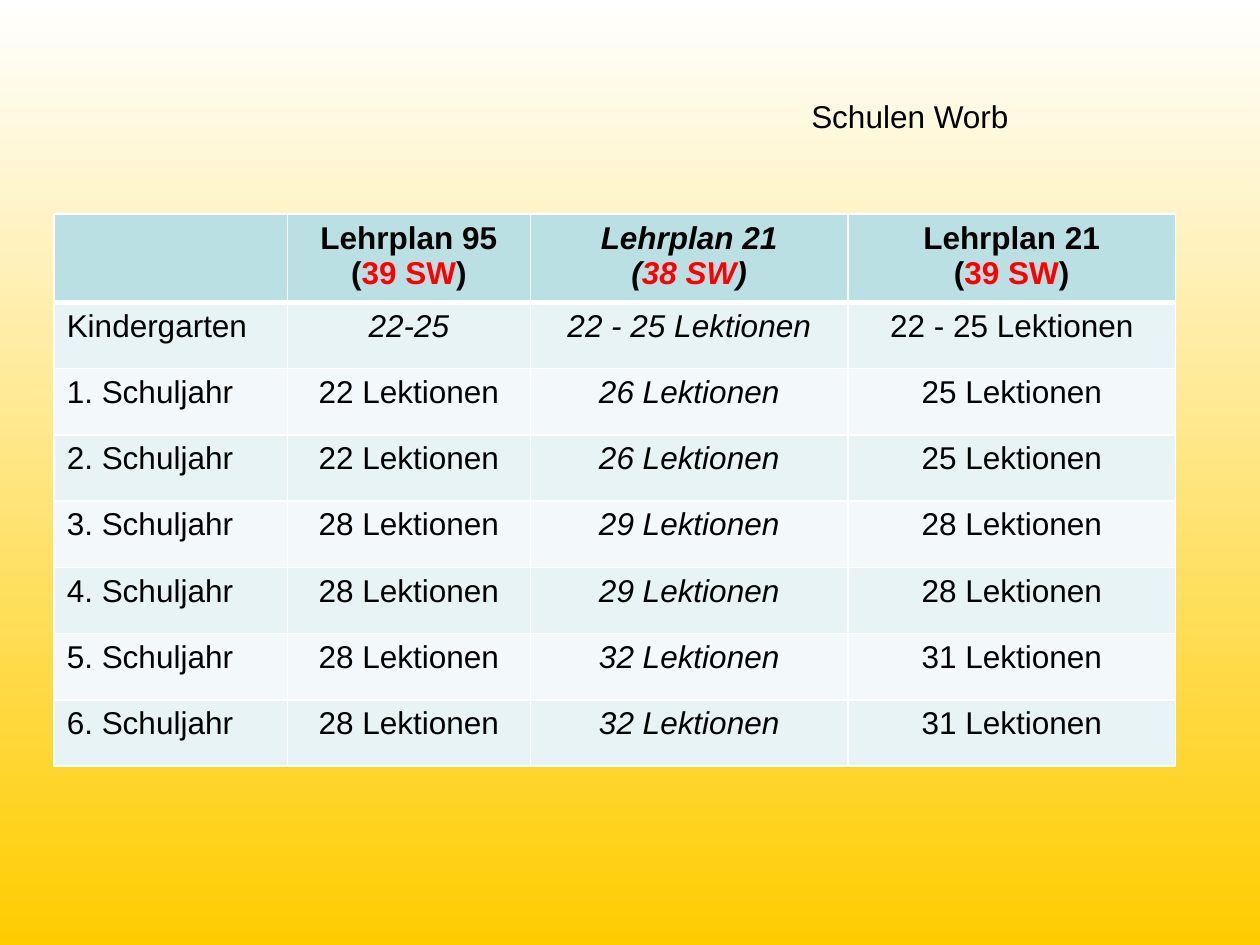
from dataclasses import dataclass

from lxml import etree
from pptx import Presentation
from pptx.dml.color import RGBColor
from pptx.enum import text
from pptx.oxml import ns
from pptx.util import Inches, Pt


@dataclass(frozen=True)
class Theme:
    font: str = "Arial"
    size: int = 18
    ink: str = "000000"
    accent: str = "FF0000"
    white: str = "FFFFFF"
    gold: str = "FFCC00"
    header: str = "BBE0E3"
    bands: tuple = ("E7F3F4", "F3F9FA")
    border: int = 1
    header_border: int = 3


THEME = Theme()
COLUMN_WIDTHS = (1.85, 1.93, 2.52, 2.6)
HEADER_HEIGHT = 0.69
TABLE_HEIGHT = 4.37
HEADINGS = (("Lehrplan 95", "39 SW"), ("Lehrplan 21", "38 SW"), ("Lehrplan 21", "39 SW"))
KINDERGARTEN = ("Kindergarten", "22-25", "22 - 25 Lektionen", "22 - 25 Lektionen")
LESSONS = ((22, 26, 25), (22, 26, 25), (28, 29, 28), (28, 29, 28), (28, 32, 31), (28, 32, 31))
ITALIC_COLUMN = 2


def add_run(paragraph, words, color=THEME.ink, bold=False, italic=False):
    run = paragraph.add_run()
    run.text = words
    font = run.font
    font.name, font.size = THEME.font, Pt(THEME.size)
    font.bold, font.italic = bold, italic
    font.color.rgb = RGBColor.from_string(color)


def paint_background(slide):
    fill = slide.background.fill
    fill.gradient()
    fill.gradient_angle = 270
    for stop, color, position in zip(fill.gradient_stops, (THEME.white, THEME.gold), (0, 1)):
        stop.color.rgb = RGBColor.from_string(color)
        stop.position = position


def add_label(slide, words, left, top, width, height):
    box = slide.shapes.add_textbox(Inches(left), Inches(top), Inches(width), Inches(height))
    box.text_frame.word_wrap = True
    add_run(box.text_frame.paragraphs[0], words)


def style_cell(cell, color, top, bottom):
    """Fill the cell and draw its four borders, with top and bottom widths in points."""
    cell.fill.solid()
    cell.fill.fore_color.rgb = RGBColor.from_string(color)
    properties = cell._tc.get_or_add_tcPr()
    widths = {"lnL": THEME.border, "lnR": THEME.border, "lnT": top, "lnB": bottom}
    for index, (side, width) in enumerate(widths.items()):
        line = etree.Element(ns.qn(f"a:{side}"), w=str(Pt(width)))
        fill = etree.SubElement(line, ns.qn("a:solidFill"))
        etree.SubElement(fill, ns.qn("a:srgbClr"), val=THEME.white)
        properties.insert(index, line)


def write_heading(cell, title, weeks, italic):
    title_line = cell.text_frame.paragraphs[0]
    weeks_line = cell.text_frame.add_paragraph()
    title_line.alignment = weeks_line.alignment = text.PP_ALIGN.CENTER
    add_run(title_line, title, bold=True, italic=italic)
    for words, color in (("(", THEME.ink), (weeks, THEME.accent), (")", THEME.ink)):
        add_run(weeks_line, words, color, bold=True, italic=italic)


def add_lesson_table(slide, left, top):
    rows = [KINDERGARTEN]
    for year, lessons in enumerate(LESSONS, start=1):
        rows.append((f"{year}. Schuljahr", *(f"{count} Lektionen" for count in lessons)))

    frame = slide.shapes.add_table(
        len(rows) + 1, len(COLUMN_WIDTHS), Inches(left), Inches(top),
        Inches(sum(COLUMN_WIDTHS)), Inches(TABLE_HEIGHT))
    table = frame.table
    for column, width in zip(table.columns, COLUMN_WIDTHS):
        column.width = Inches(width)
    for row in table.rows:
        row.height = Inches((TABLE_HEIGHT - HEADER_HEIGHT) / len(rows))
    table.rows[0].height = Inches(HEADER_HEIGHT)

    for cell in table.rows[0].cells:
        style_cell(cell, THEME.header, THEME.border, THEME.header_border)
    for column, (title, weeks) in enumerate(HEADINGS, start=1):
        write_heading(table.cell(0, column), title, weeks, column == ITALIC_COLUMN)

    for row, values in enumerate(rows, start=1):
        top_border = THEME.header_border if row == 1 else THEME.border
        for column, value in enumerate(values):
            cell = table.cell(row, column)
            style_cell(cell, THEME.bands[(row - 1) % 2], top_border, THEME.border)
            paragraph = cell.text_frame.paragraphs[0]
            if column:
                paragraph.alignment = text.PP_ALIGN.CENTER
            italic = column == ITALIC_COLUMN or (row, column) == (1, 1)
            add_run(paragraph, value, italic=italic)


def main():
    presentation = Presentation()
    presentation.slide_width, presentation.slide_height = Inches(10), Inches(7.5)
    slide = presentation.slides.add_slide(presentation.slide_layouts[6])
    paint_background(slide)
    add_label(slide, "Schulen Worb", 6.34, 0.72, 1.89, 0.4)
    add_lesson_table(slide, 0.43, 1.7)
    presentation.save("out.pptx")


if __name__ == "__main__":
    main()
